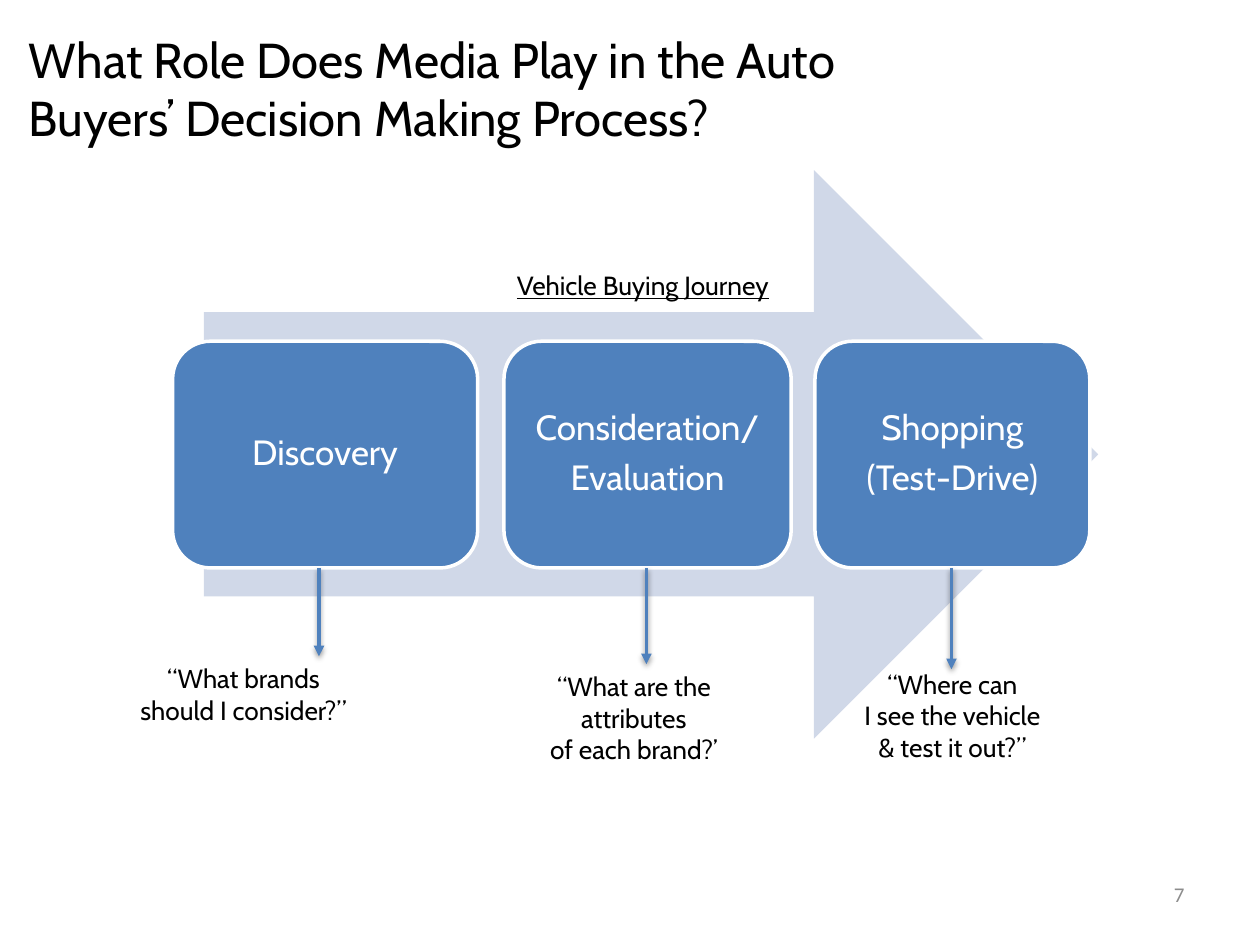
from dataclasses import dataclass

from lxml import etree
from pptx import Presentation
from pptx.dml.color import RGBColor
from pptx.enum.shapes import MSO_CONNECTOR, MSO_SHAPE
from pptx.enum.text import MSO_ANCHOR, MSO_AUTO_SIZE, PP_ALIGN
from pptx.oxml import parse_xml
from pptx.oxml.ns import nsdecls, qn
from pptx.util import Cm, Pt

ARROW, ROUNDED = MSO_SHAPE.RIGHT_ARROW, MSO_SHAPE.ROUNDED_RECTANGLE
STRAIGHT = MSO_CONNECTOR.STRAIGHT
LEFT, CENTER, RIGHT = PP_ALIGN.LEFT, PP_ALIGN.CENTER, PP_ALIGN.RIGHT
TOP, MIDDLE = MSO_ANCHOR.TOP, MSO_ANCHOR.MIDDLE


@dataclass(frozen=True)
class Theme:
    font: str = "Cabin"
    number_font: str = "Calibri"
    black: RGBColor = RGBColor(0, 0, 0)
    white: RGBColor = RGBColor(255, 255, 255)
    blue: RGBColor = RGBColor(0x4F, 0x81, 0xBD)
    pale: RGBColor = RGBColor(0xD0, 0xD8, 0xE8)
    gray: RGBColor = RGBColor(0x8C, 0x8C, 0x8C)
    title_size: int = 28
    stage_size: int = 20
    note_size: int = 15
    number_size: int = 12


@dataclass(frozen=True)
class Box:
    """Left, top, width and height in centimetres."""
    x: float
    y: float
    w: float
    h: float

    def emu(self) -> list:
        return [Cm(v) for v in (self.x, self.y, self.w, self.h)]


@dataclass(frozen=True)
class Stage:
    name: str
    x: float
    w: float
    pointer_x: float
    pointer_end: float
    question: str
    note: Box
    wrap: bool = True


THEME = Theme()
STAGE_TOP, STAGE_HEIGHT = 6.88, 4.57
STAGES = [
    Stage("Discovery", 3.48, 6.15, 6.43, 13.23,
          "“What brands\nshould I consider?”", Box(2.41, 13.23, 5, 1.55), wrap=False),
    Stage("Consideration/\nEvaluation", 10.16, 5.79, 13.03, 13.39,
          "“What are the attributes\nof each brand?’", Box(9.91, 13.39, 5.74, 2.18)),
    Stage("Shopping\n(Test-Drive)", 16.43, 5.54, 19.18, 13.49,
          "“Where can\nI see the vehicle\n& test it out?”", Box(16.48, 13.34, 5.44, 2.18)),
]


def write_text(tf, text: str, *, size: int, color: RGBColor = THEME.black,
               font: str = THEME.font, align=CENTER, anchor=TOP, underline: bool = False,
               wrap: bool = True, line_spacing=None, space_after=None) -> None:
    """Fill a text frame, one paragraph per line; a vertical tab is a line break."""
    tf.text = text
    tf.word_wrap = wrap
    tf.auto_size = MSO_AUTO_SIZE.NONE
    tf.vertical_anchor = anchor
    for p in tf.paragraphs:
        p.alignment = align
        p.line_spacing = line_spacing
        p.space_after = space_after
        for r in p.runs:
            r.font.name = font
            r.font.size = Pt(size)
            r.font.color.rgb = color
            r.font.underline = underline


def add_text(s, box: Box, text: str, **style) -> None:
    write_text(s.shapes.add_textbox(*box.emu()).text_frame, text, **style)


def add_filled(s, kind, box: Box, fill: RGBColor):
    sp = s.shapes.add_shape(kind, *box.emu())
    sp.shadow.inherit = False
    sp.fill.solid()
    sp.fill.fore_color.rgb = fill
    sp.line.fill.background()
    return sp


def add_stage(s, stage: Stage) -> None:
    sp = add_filled(s, ROUNDED, Box(stage.x, STAGE_TOP, stage.w, STAGE_HEIGHT), THEME.blue)
    sp.line.color.rgb = THEME.white
    sp.line.width = Pt(2)
    tf = sp.text_frame
    tf.margin_left = tf.margin_right = tf.margin_top = tf.margin_bottom = Cm(0.2)
    write_text(tf, stage.name, size=THEME.stage_size, color=THEME.white, anchor=MIDDLE,
               line_spacing=0.9, space_after=Pt(7))


def add_pointer(s, stage: Stage) -> None:
    x = Cm(stage.pointer_x)
    line = s.shapes.add_connector(STRAIGHT, x, Cm(STAGE_TOP + STAGE_HEIGHT),
                                  x, Cm(stage.pointer_end))
    line.line.color.rgb = THEME.blue
    line.line.width = Pt(2)
    # Arrowhead and soft shadow
    etree.SubElement(line.line._get_or_add_ln(), qn("a:tailEnd"), type="triangle")
    line._element.spPr.append(parse_xml(
        f'<a:effectLst {nsdecls("a")}>'
        f'<a:outerShdw blurRad="{Pt(3.1)}" dist="{Pt(1.6)}" dir="5400000" rotWithShape="0">'
        '<a:srgbClr val="000000"><a:alpha val="38000"/></a:srgbClr>'
        '</a:outerShdw></a:effectLst>'))


def main() -> None:
    prs = Presentation()
    prs.slide_width, prs.slide_height = Cm(25.4), Cm(19.05)
    s = prs.slides.add_slide(prs.slide_layouts[5])

    # Title
    title = s.shapes.title
    title.left, title.top, title.width, title.height = Box(0.33, 0.46, 22.12, 3.18).emu()
    write_text(title.text_frame,
               "What Role Does Media Play in the Auto\vBuyers’ Decision Making Process?",
               size=THEME.title_size, align=LEFT)

    # Journey arrow and its caption
    add_filled(s, ARROW, Box(4.11, 3.43, 18.03, 11.46), THEME.pale)
    add_text(s, Box(4.11, 5.31, 17.7, 0.89), "Vehicle Buying Journey",
             size=THEME.note_size, underline=True)

    # Stages with the question each one answers
    for stage in STAGES:
        add_stage(s, stage)
        add_pointer(s, stage)
        add_text(s, stage.note, stage.question, size=THEME.note_size, wrap=stage.wrap)

    # Page number
    add_text(s, Box(18.21, 17.65, 5.92, 1.02), "7", size=THEME.number_size,
             color=THEME.gray, font=THEME.number_font, align=RIGHT)

    prs.save("out.pptx")


if __name__ == "__main__":
    main()
